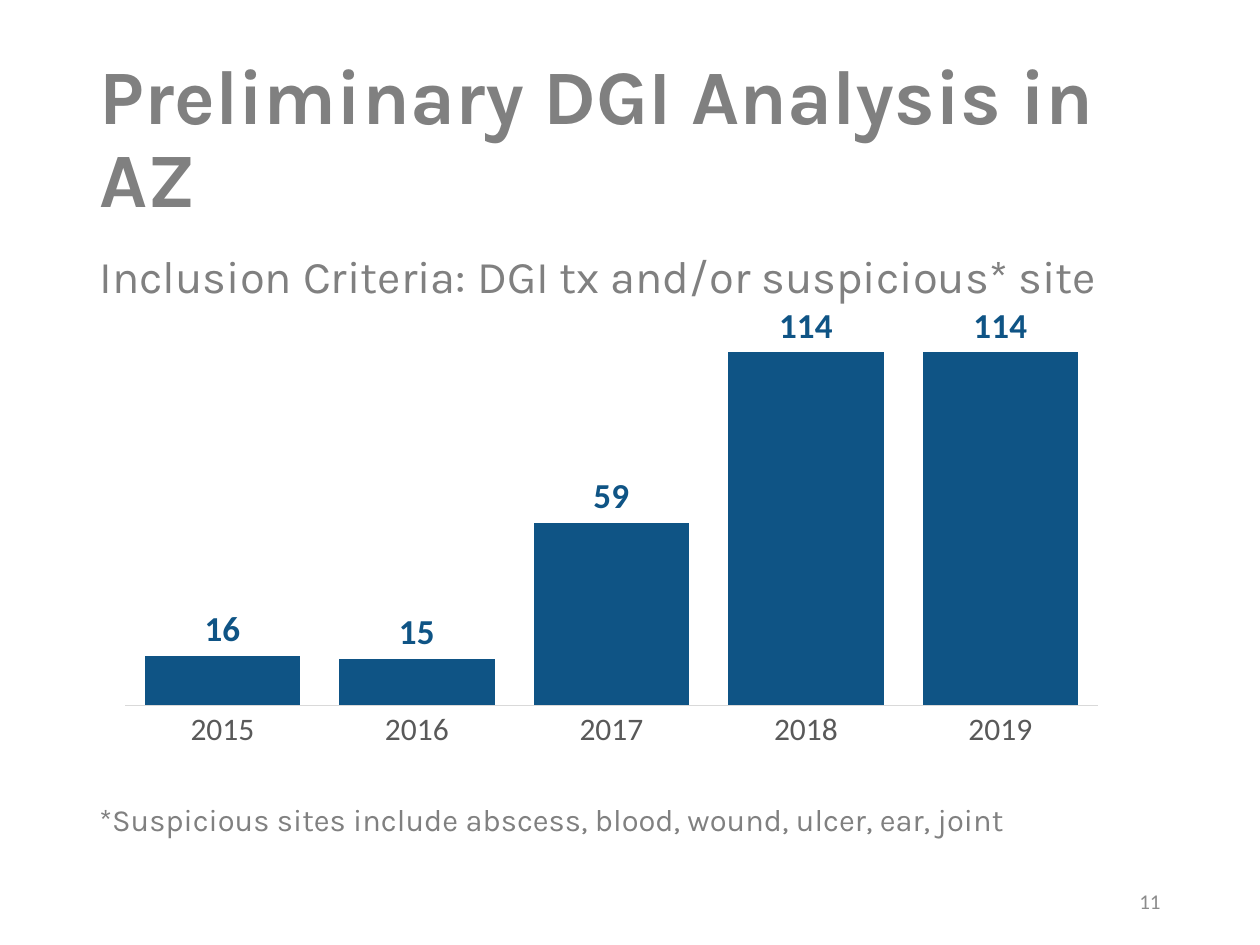
import pptx
import pptx.chart.data
import pptx.dml.color
import pptx.enum.chart
import pptx.enum.text
import pptx.oxml
import pptx.oxml.ns
import pptx.util

PX = pptx.util.Inches(1) / 126
GREY = "808080"
BLUE = "0F5485"
ANCHOR = pptx.enum.text.MSO_ANCHOR
ALIGN = pptx.enum.text.PP_ALIGN


def emu(*px):
    """Turn px lengths into EMU."""
    return [pptx.util.Emu(round(v * PX)) for v in px]


def rgb(color):
    """Return the colour of a hex string."""
    return pptx.dml.color.RGBColor.from_string(color)


def set_font(font, size, color, name, bold=False):
    """Format a font."""
    font.size = pptx.util.Pt(size)
    font.color.rgb = rgb(color)
    font.name = name
    font.bold = bold


def put_text(sp, text, size, color=GREY, name="Karla", bold=False,
             spacing=1.0, align=ALIGN.LEFT, anchor=ANCHOR.TOP):
    """Fill a shape with one formatted paragraph."""
    tf = sp.text_frame
    tf.word_wrap = True
    tf.auto_size = pptx.enum.text.MSO_AUTO_SIZE.NONE
    tf.vertical_anchor = anchor
    p = tf.paragraphs[0]
    p.alignment = align
    p.line_spacing = spacing
    r = p.add_run()
    r.text = text
    set_font(r.font, size, color, name, bold)


def add_title(s, box, text):
    """Place and format the title placeholder."""
    sp = s.shapes.title
    sp.left, sp.top, sp.width, sp.height = emu(*box)
    put_text(sp, text, 44, bold=True, spacing=0.9, anchor=ANCHOR.MIDDLE)


def add_text(s, box, text, size, **fmt):
    """Add a text box."""
    put_text(s.shapes.add_textbox(*emu(*box)), text, size, **fmt)


def set_plot_area(chart, **fractions):
    """Fix the inner plot area as fractions of the chart."""
    plot_area = chart._chartSpace.chart.plotArea
    for old in plot_area.findall(pptx.oxml.ns.qn("c:layout")):
        plot_area.remove(old)
    parts = "".join(f'<c:{k} val="{v}"/>' for k, v in fractions.items())
    plot_area.insert(0, pptx.oxml.parse_xml(
        f'<c:layout {pptx.oxml.ns.nsdecls("c")}><c:manualLayout>'
        '<c:layoutTarget val="inner"/><c:xMode val="edge"/><c:yMode val="edge"/>'
        f'{parts}</c:manualLayout></c:layout>'))


def add_case_chart(s, box, cases):
    """Add the column chart of cases by year."""
    data = pptx.chart.data.CategoryChartData()
    data.categories = list(cases)
    data.add_series("Series 1", list(cases.values()))
    kind = pptx.enum.chart.XL_CHART_TYPE.COLUMN_CLUSTERED
    chart = s.shapes.add_chart(kind, *emu(*box), data).chart
    chart.has_legend = False
    chart.has_title = False
    set_font(chart.font, 10, "000000", "Calibri")
    set_plot_area(chart, x=0.02, y=0.06, w=0.96, h=0.79)

    plot = chart.plots[0]
    plot.gap_width = 25
    plot.overlap = -27
    plot.vary_by_categories = False
    fill = plot.series[0].format.fill
    fill.solid()
    fill.fore_color.rgb = rgb(BLUE)
    plot.has_data_labels = True
    labels = plot.data_labels
    labels.show_value = True
    labels.position = pptx.enum.chart.XL_LABEL_POSITION.OUTSIDE_END
    set_font(labels.font, 20, BLUE, "Calibri", bold=True)

    years = chart.category_axis
    years.major_tick_mark = pptx.enum.chart.XL_TICK_MARK.NONE
    years.format.line.color.rgb = rgb("D9D9D9")
    years.format.line.width = pptx.util.Pt(0.75)
    set_font(years.tick_labels.font, 18, "595959", "Calibri")
    values = chart.value_axis
    values.visible = False
    values.has_major_gridlines = False
    values.minimum_scale = 0
    values.maximum_scale = 120


def main():
    """Build the slide and save it."""
    prs = pptx.Presentation()
    prs.slide_width, prs.slide_height = emu(1260, 945)
    s = prs.slides.add_slide(prs.slide_layouts[5])
    add_title(s, (87, 50, 1086, 183), "Preliminary DGI Analysis in AZ")
    add_text(s, (87, 252, 1086, 54),
             "Inclusion Criteria: DGI tx and/or suspicious* site", 25.9, spacing=0.8)
    add_case_chart(s, (105, 304, 1013, 472),
                   {"2015": 16, "2016": 15, "2017": 59, "2018": 114, "2019": 114})
    add_text(s, (87, 802, 1086, 42),
             "*Suspicious sites include abscess, blood, wound, ulcer, ear, joint",
             17.6, spacing=0.8)
    add_text(s, (890, 876, 283, 50), "11", 12, color="8C8C8C", name="Calibri",
             align=ALIGN.RIGHT, anchor=ANCHOR.MIDDLE)
    prs.save("out.pptx")


if __name__ == "__main__":
    main()
